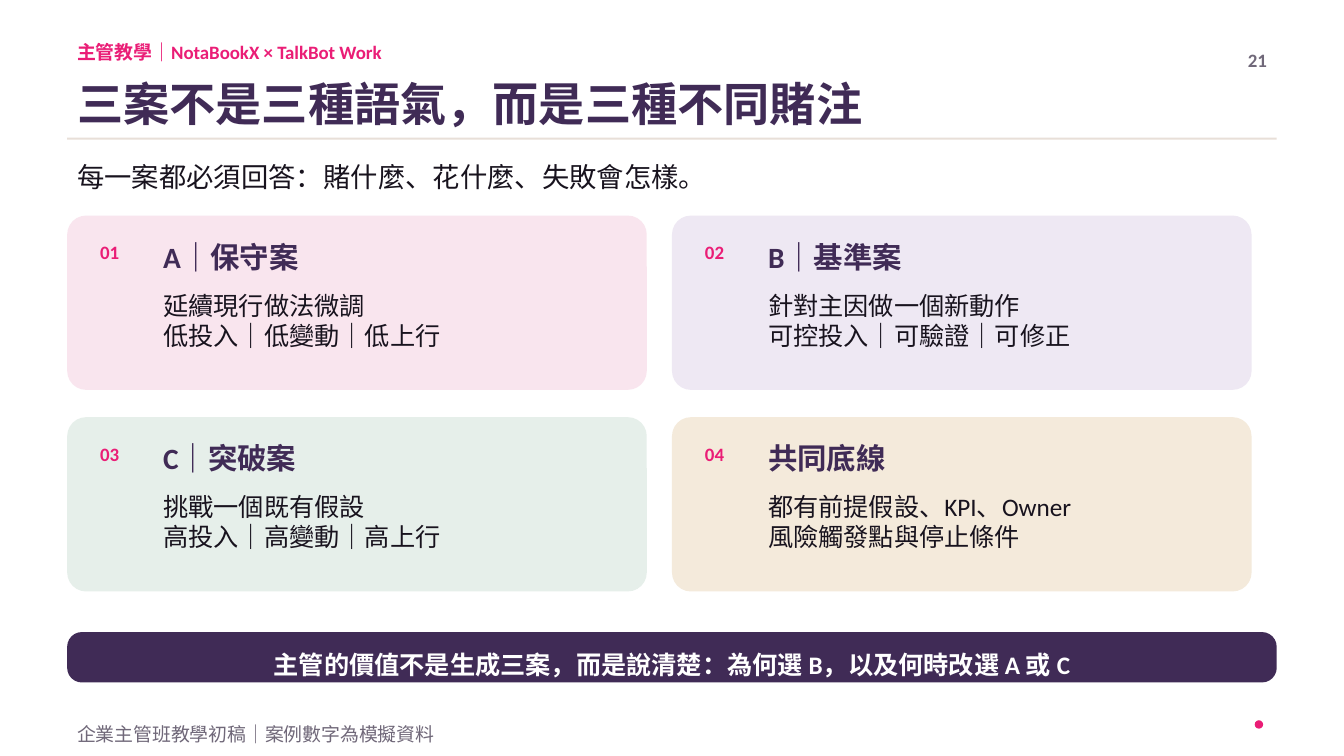
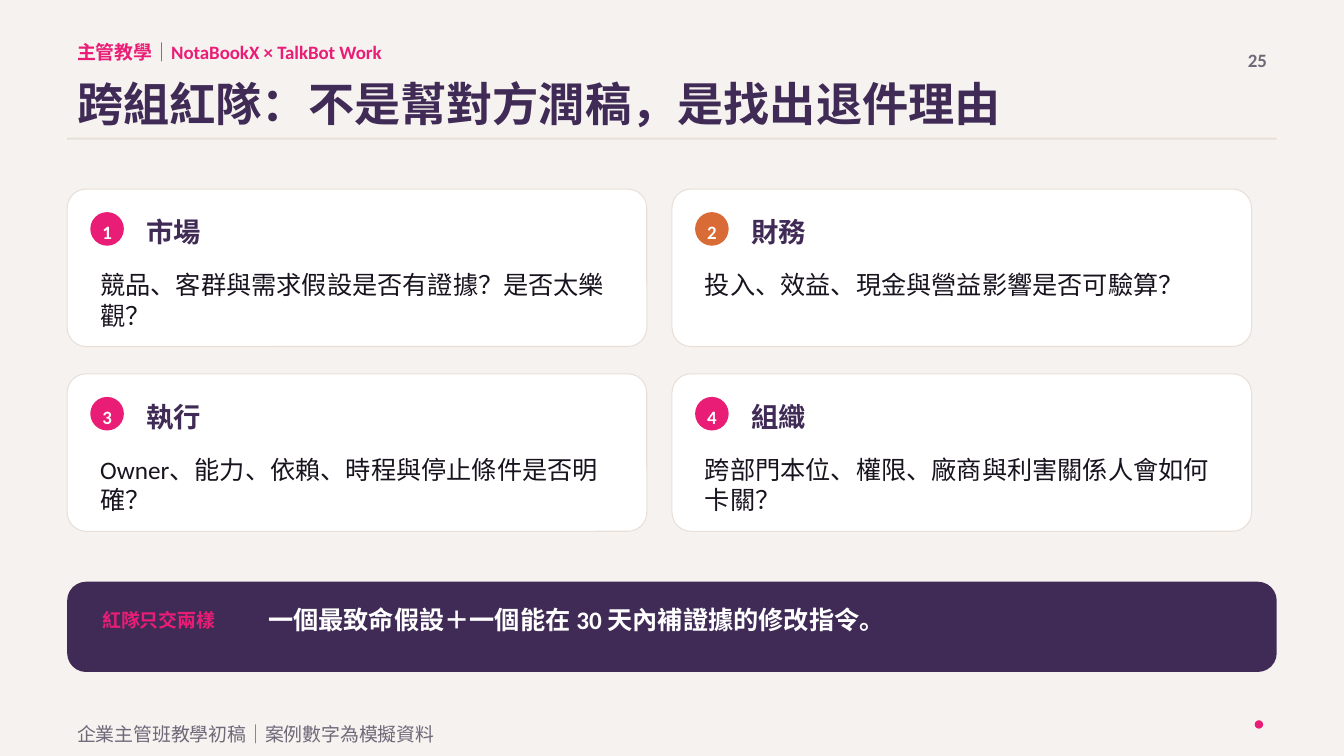
from dataclasses import dataclass

from pptx import Presentation
from pptx.dml.color import RGBColor as Rgb
from pptx.enum.shapes import MSO_SHAPE as Kind
from pptx.enum.text import PP_ALIGN as Align
from pptx.util import Pt

# Shared look
FONT = "Calibri"
PINK, PLUM, INK = "EA1D76", "402B56", "18131E"
GREY, RULE, WHITE = "706879", "E8DFD8", "FFFFFF"
SAND, RUST = "F6F2EF", "D96C36"
LEFT, WIDE = 48, 864
CARD, STEP = 414, 432
SMALL, BODY = 13.5, 18
CURVE = 13.5


@dataclass
class Plan:
    head: str
    lines: list[str]
    fill: str


@dataclass
class Check:
    head: str
    body: str
    dot: str = PINK


def color(code: str) -> Rgb:
    return Rgb.from_string(code)


def text(slide, x: float, y: float, w: float, h: float, lines: str | list[str],
         size: float, ink: str, bold: bool = False, align=Align.LEFT) -> None:
    frame = slide.shapes.add_textbox(Pt(x), Pt(y), Pt(w), Pt(h)).text_frame
    frame.word_wrap = True
    frame.text = lines if isinstance(lines, str) else "\n".join(lines)
    for para in frame.paragraphs:
        para.alignment = align
        font = para.font
        font.name, font.size, font.bold = FONT, Pt(size), bold
        font.color.rgb = color(ink)


def shape(slide, kind, x: float, y: float, w: float, h: float,
          fill: str, line: str = "", curve: float = 0) -> None:
    item = slide.shapes.add_shape(kind, Pt(x), Pt(y), Pt(w), Pt(h))
    item.shadow.inherit = False
    item.fill.solid()
    item.fill.fore_color.rgb = color(fill)
    if line:
        item.line.color.rgb = color(line)
        item.line.width = Pt(0.75)
    else:
        item.line.fill.background()
    if curve:
        item.adjustments[0] = curve / h


def panel(slide, x: float, y: float, w: float, h: float,
          fill: str, line: str = "", curve: float = CURVE) -> None:
    shape(slide, Kind.ROUNDED_RECTANGLE, x, y, w, h, fill, line, curve)


def place(i: int, top: float, step: float) -> tuple[float, float]:
    """Corner of card i in a grid of two columns."""
    row, col = divmod(i, 2)
    return LEFT + col * STEP, top + row * step


def base(deck, title: str, page: int, back: str):
    """New slide with header, rule and footer."""
    slide = deck.slides.add_slide(deck.slide_layouts[6])
    slide.background.fill.solid()
    slide.background.fill.fore_color.rgb = color(back)
    text(slide, LEFT, 25.5, 540, 18, "主管教學｜NotaBookX × TalkBot Work",
         SMALL, PINK, True)
    text(slide, LEFT, 50.25, 795, 43.5, title, 33, PLUM, True)
    text(slide, 870, 31.5, 42, 25.5, str(page), SMALL, GREY, True, Align.RIGHT)
    shape(slide, Kind.RECTANGLE, LEFT, 98.25, WIDE, 1.5, RULE)
    text(slide, LEFT, 512.5, 780, 13.5, "企業主管班教學初稿｜案例數字為模擬資料",
         SMALL, GREY)
    shape(slide, Kind.OVAL, 896.25, 514.5, 6, 6, PINK)
    return slide


def plans(deck) -> None:
    slide = base(deck, "三案不是三種語氣，而是三種不同賭注", 21, WHITE)
    text(slide, LEFT, 111, 675, 24, "每一案都必須回答：賭什麼、花什麼、失敗會怎樣。",
         19.5, INK)

    # Cards
    cards = [
        Plan("A｜保守案", ["延續現行做法微調", "低投入｜低變動｜低上行"], "F9E5EE"),
        Plan("B｜基準案", ["針對主因做一個新動作", "可控投入｜可驗證｜可修正"], "EEE8F3"),
        Plan("C｜突破案", ["挑戰一個既有假設", "高投入｜高變動｜高上行"], "E6EFEA"),
        Plan("共同底線", ["都有前提假設、KPI、Owner", "風險觸發點與停止條件"], "F4EADB"),
    ]
    for i, card in enumerate(cards):
        x, y = place(i, 154, 144)
        panel(slide, x, y, CARD, 124.5, card.fill)
        text(slide, x + 16.5, y + 14.5, 34, 19.5, f"{i + 1:02}", SMALL, PINK, True)
        text(slide, x + 61.5, y + 13, 322.5, 25.5, card.head, 21, PLUM, True)
        text(slide, x + 61.5, y + 49.5, 322.5, 55, card.lines, BODY, INK)

    # Closing band
    panel(slide, LEFT, 451.5, WIDE, 36, PLUM, curve=10.5)
    text(slide, 64.5, 460, 831, 19,
         "主管的價值不是生成三案，而是說清楚：為何選 B，以及何時改選 A 或 C",
         BODY, WHITE, True, Align.CENTER)


def checks(deck) -> None:
    slide = base(deck, "跨組紅隊：不是幫對方潤稿，是找出退件理由", 25, SAND)

    # Cards
    cards = [
        Check("市場", "競品、客群與需求假設是否有證據？是否太樂觀？"),
        Check("財務", "投入、效益、現金與營益影響是否可驗算？", RUST),
        Check("執行", "Owner、能力、依賴、時程與停止條件是否明確？"),
        Check("組織", "跨部門本位、權限、廠商與利害關係人會如何卡關？"),
    ]
    for i, card in enumerate(cards):
        x, y = place(i, 135, 132)
        panel(slide, x, y, CARD, 112.5, WHITE, RULE)
        shape(slide, Kind.OVAL, x + 16.5, y + 16.5, 24, 24, card.dot)
        text(slide, x + 16.5, y + 19, 24, 18, str(i + 1),
             SMALL, WHITE, True, Align.CENTER)
        text(slide, x + 49.5, y + 15, 342, 25.5, card.head, 19.5, PLUM, True)
        text(slide, x + 16.5, y + 54, 381, 43.5, card.body, BODY, INK)

    # Closing band
    panel(slide, LEFT, 415.5, WIDE, 64.5, PLUM)
    text(slide, 66, 431.25, 112.5, 18, "紅隊只交兩樣", SMALL, PINK, True)
    text(slide, 184.5, 428, 697.5, 34,
         "一個最致命假設＋一個能在 30 天內補證據的修改指令。", BODY, WHITE, True)


def main() -> None:
    deck = Presentation()
    deck.slide_width, deck.slide_height = Pt(960), Pt(540)
    plans(deck)
    checks(deck)
    deck.save("out.pptx")


if __name__ == "__main__":
    main()
